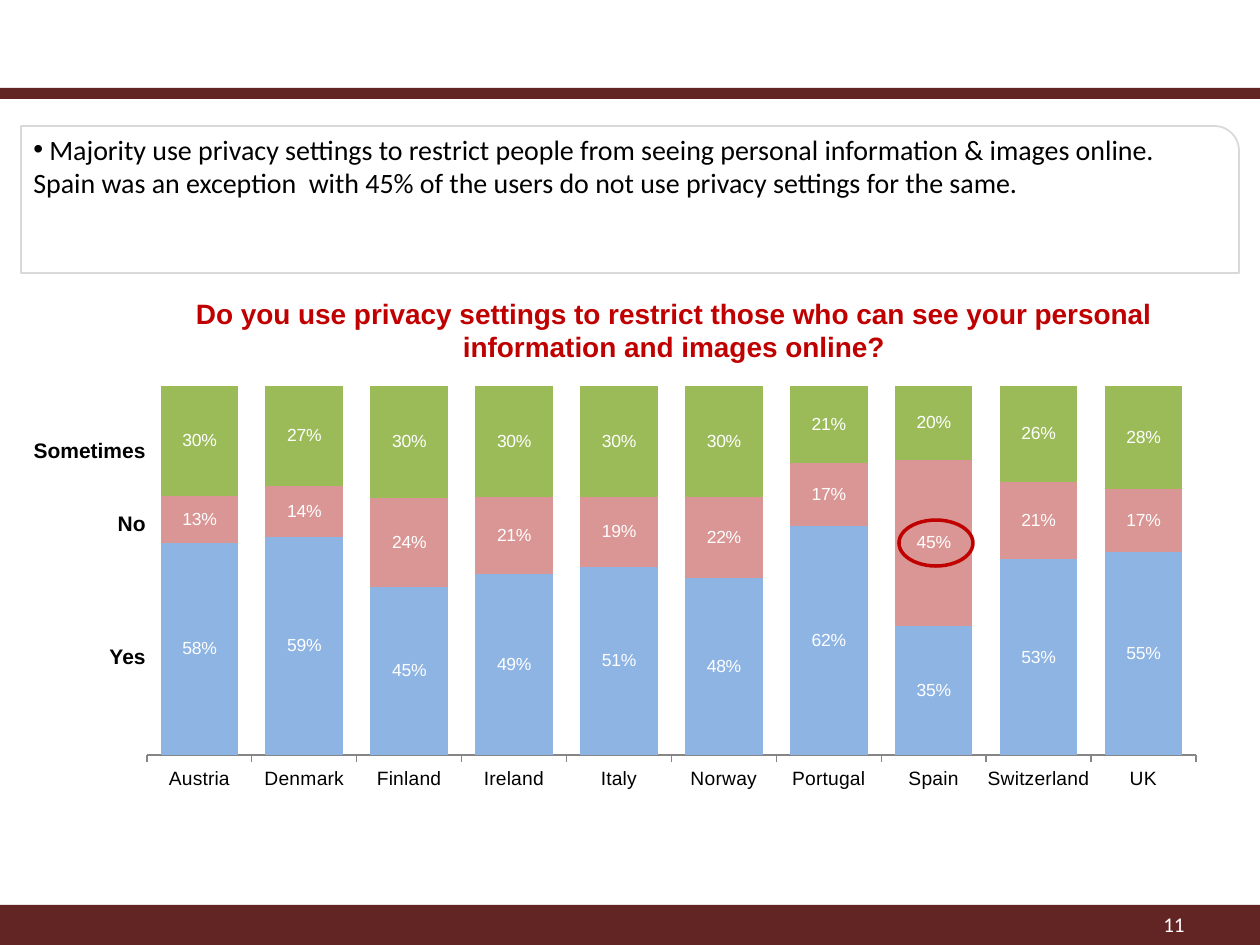
"""Build the privacy settings survey slide with its stacked column chart."""
from dataclasses import dataclass

from lxml.etree import SubElement
from pptx import Presentation
from pptx.chart.data import CategoryChartData
from pptx.dml.color import RGBColor
from pptx.enum.chart import XL_CHART_TYPE as ChartType, XL_TICK_MARK as Tick
from pptx.enum.shapes import MSO_SHAPE as Shape
from pptx.enum.text import MSO_ANCHOR as Anchor, PP_ALIGN as Align
from pptx.oxml.ns import qn
from pptx.util import Emu, Pt

PX = 914400 / 126
MAROON = RGBColor(0x63, 0x25, 0x23)
RED = RGBColor(0xC0, 0x00, 0x00)
BLUE = RGBColor(0x8E, 0xB4, 0xE3)
PINK = RGBColor(0xD9, 0x96, 0x94)
GREEN = RGBColor(0x9B, 0xBB, 0x59)
GRAY = RGBColor(0xD9, 0xD9, 0xD9)
AXIS = RGBColor(0x86, 0x86, 0x86)
BLACK = RGBColor(0x00, 0x00, 0x00)
WHITE = RGBColor(0xFF, 0xFF, 0xFF)


@dataclass(frozen=True)
class Box:
    x: int
    y: int
    w: int
    h: int

    def emu(self) -> tuple[Emu, ...]:
        return tuple(Emu(round(v * PX)) for v in (self.x, self.y, self.w, self.h))


@dataclass(frozen=True)
class Style:
    size: int
    color: RGBColor
    font: str = "Arial"
    bold: bool = False
    align: Align = Align.LEFT
    anchor: Anchor = Anchor.TOP


@dataclass(frozen=True)
class Label:
    text: str
    box: Box
    style: Style


@dataclass(frozen=True)
class Answer:
    name: str
    color: RGBColor
    percents: tuple[int, ...]


SIDE = Style(12, BLACK, bold=True, align=Align.RIGHT, anchor=Anchor.MIDDLE)
TITLE = Style(16, RED, bold=True, align=Align.CENTER)
NUMBER = Style(12, WHITE, "Calibri", align=Align.RIGHT, anchor=Anchor.MIDDLE)
BODY = Style(16, BLACK, "Calibri")

BARS = (Box(0, 88, 1260, 11), Box(0, 905, 1260, 40))
LABELS = (
    Label("11", Box(903, 899, 294, 50), NUMBER),
    Label("Yes", Box(0, 637, 158, 38), SIDE),
    Label("No", Box(0, 504, 158, 38), SIDE),
    Label("Sometimes", Box(0, 431, 158, 38), SIDE),
    Label("Do you use privacy settings to restrict those who can see your "
          "personal information and images online?", Box(165, 290, 1018, 81), TITLE),
)
FINDING = (" Majority use privacy settings to restrict people from seeing personal "
           "information & images online. Spain was an exception  with 45% of the "
           "users do not use privacy settings for the same.")
COUNTRIES = ("Austria", "Denmark", "Finland", "Ireland", "Italy",
             "Norway", "Portugal", "Spain", "Switzerland", "UK")
ANSWERS = (
    Answer("Yes", BLUE, (58, 59, 45, 49, 51, 48, 62, 35, 53, 55)),
    Answer("No", PINK, (13, 14, 24, 21, 19, 22, 17, 45, 21, 17)),
    Answer("Sometimes", GREEN, (30, 27, 30, 30, 30, 30, 21, 20, 26, 28)),
)
CHART = Box(126, 378, 1092, 421)
PLOT = Box(147, 386, 1049, 369)


def write(sp, text: str, style: Style, bullet: str = "") -> None:
    tf = sp.text_frame
    tf.word_wrap = True
    tf.vertical_anchor = style.anchor
    p = tf.paragraphs[0]
    p.text = text
    p.alignment = style.align
    if bullet:
        pPr = p._p.get_or_add_pPr()
        SubElement(pPr, qn("a:buFont")).set("typeface", "Arial")
        SubElement(pPr, qn("a:buChar")).set("char", bullet)
    font = p.runs[0].font
    font.name, font.size, font.bold = style.font, Pt(style.size), style.bold
    font.color.rgb = style.color


def add_bar(slide, box: Box) -> None:
    sp = slide.shapes.add_shape(Shape.RECTANGLE, *box.emu())
    sp.shadow.inherit = False
    sp.fill.solid()
    sp.fill.fore_color.rgb = MAROON
    sp.line.fill.background()


def add_outline(slide, kind: Shape, box: Box, color: RGBColor, width: float):
    sp = slide.shapes.add_shape(kind, *box.emu())
    sp.shadow.inherit = False
    sp.fill.background()
    sp.line.color.rgb = color
    sp.line.width = Pt(width)
    return sp


def add_label(slide, label: Label) -> None:
    write(slide.shapes.add_textbox(*label.box.emu()), label.text, label.style)


def fix_plot(chart) -> None:
    area = chart._chartSpace.chart.plotArea
    layout = area.find(qn("c:layout"))
    if layout is None:
        layout = SubElement(area, qn("c:layout"))
        area.insert(0, layout)
    manual = SubElement(layout, qn("c:manualLayout"))
    settings = {
        "layoutTarget": "inner", "xMode": "edge", "yMode": "edge",
        "x": (PLOT.x - CHART.x) / CHART.w, "y": (PLOT.y - CHART.y) / CHART.h,
        "w": PLOT.w / CHART.w, "h": PLOT.h / CHART.h,
    }
    for tag, value in settings.items():
        SubElement(manual, qn(f"c:{tag}")).set("val", str(value))


def add_answers_chart(slide) -> None:
    data = CategoryChartData(number_format="0%")
    data.categories = COUNTRIES
    for answer in ANSWERS:
        data.add_series(answer.name, [v / 100 for v in answer.percents])
    chart = slide.shapes.add_chart(
        ChartType.COLUMN_STACKED_100, *CHART.emu(), data).chart
    chart.has_legend = chart.has_title = False
    chart.font.name, chart.font.size = "Arial", Pt(12)
    chart.font.color.rgb = BLACK
    plot = chart.plots[0]
    plot.gap_width, plot.overlap = 35, 100
    plot.vary_by_categories = False
    for series, answer in zip(plot.series, ANSWERS):
        series.format.fill.solid()
        series.format.fill.fore_color.rgb = answer.color
        labels = series.data_labels
        labels.show_value = True
        labels.number_format, labels.number_format_is_linked = "0%", False
        labels.font.size = Pt(10)
        labels.font.color.rgb = WHITE
    axis = chart.category_axis
    axis.major_tick_mark = Tick.OUTSIDE
    axis.tick_labels.font.size = Pt(11)
    axis.format.line.color.rgb = AXIS
    chart.value_axis.visible = False
    chart.value_axis.has_major_gridlines = False
    chart.value_axis.minimum_scale, chart.value_axis.maximum_scale = 0, 1
    fix_plot(chart)


def main() -> None:
    prs = Presentation()
    prs.slide_width, prs.slide_height = Box(0, 0, 1260, 945).emu()[2:]
    slide = prs.slides.add_slide(prs.slide_layouts[6])
    for bar in BARS:
        add_bar(slide, bar)
    add_answers_chart(slide)
    panel = add_outline(slide, Shape.ROUND_1_RECTANGLE, Box(21, 126, 1218, 147), GRAY, 1)
    write(panel, FINDING, BODY, "•")
    for label in LABELS:
        add_label(slide, label)
    add_outline(slide, Shape.OVAL, Box(899, 520, 74, 46), RED, 2)
    prs.save("out.pptx")


if __name__ == "__main__":
    main()
